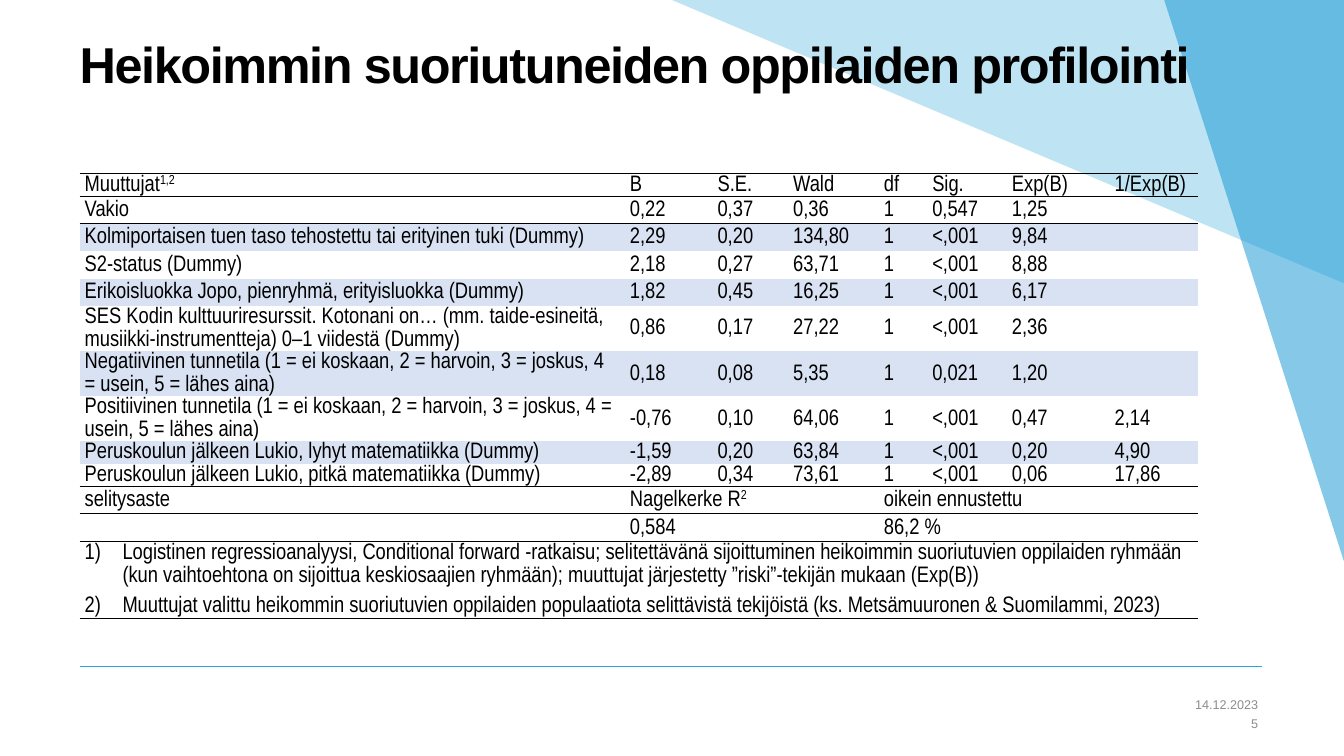
from collections import namedtuple
from dataclasses import dataclass

from lxml.etree import SubElement
from pptx import Presentation
from pptx.dml.color import RGBColor
from pptx.enum.shapes import MSO_CONNECTOR as Connector
from pptx.enum.text import MSO_ANCHOR as Anchor, MSO_AUTO_SIZE as AutoSize, PP_ALIGN as Align
from pptx.oxml.ns import qn
from pptx.util import Pt

Box = namedtuple("Box", "left top width height")


@dataclass(frozen=True)
class Theme:
    ink: str = "000000"
    band: str = "D9E2F3"
    rule: str = "28A7DA"
    ray: str = "0D93D2"
    muted: str = "8C8C8C"
    font: str = "Arial"
    table_font: str = "Arial Narrow"
    title_size: int = 36
    table_size: int = 16
    footer_size: int = 9
    plain_table: str = "{2D5ABB26-0587-4C30-8999-92F81FD0307C}"


THEME = Theme()
SLIDE = Box(0, 0, 960, 540)
TITLE = Box(56.9, 30.2, 844.6, 94.3)
TABLE = Box(56.9, 123.8, 800, 310)
FOOTER = Box(518.4, 496, 380.2, 28)
RULE = Box(56.9, 475.9, 844.6, 0)

COLUMN_WIDTHS = (389.5, 62.6, 54, 64.8, 34.6, 56.9, 73.4, 63.4)
ROW_HEIGHTS = (16.4, *[19.5] * 4, *[32.1] * 3, *[16.2] * 2, *[16] * 2, 55)
RULED_EDGES = {0, 1, 10, 12, 13}
BANDED_ROWS = {2, 4, 6, 8}
MERGES = ((10, 1, 3), (10, 4, 6), (11, 1, 2), (11, 4, 6), (12, 0, 7))

ROWS = (
    ("Muuttujat^1,2", "B", "S.E.", "Wald", "df", "Sig.", "Exp(B)", "1/Exp(B)"),
    ("Vakio", "0,22", "0,37", "0,36", "1", "0,547", "1,25"),
    ("Kolmiportaisen tuen taso tehostettu tai erityinen tuki (Dummy)",
     "2,29", "0,20", "134,80", "1", "<,001", "9,84"),
    ("S2-status (Dummy)", "2,18", "0,27", "63,71", "1", "<,001", "8,88"),
    ("Erikoisluokka Jopo, pienryhmä, erityisluokka (Dummy)",
     "1,82", "0,45", "16,25", "1", "<,001", "6,17"),
    ("SES Kodin kulttuuriresurssit. Kotonani on… (mm. taide-esineitä, "
     "musiikki-instrumentteja) 0–1 viidestä (Dummy)",
     "0,86", "0,17", "27,22", "1", "<,001", "2,36"),
    ("Negatiivinen tunnetila (1 = ei koskaan, 2 = harvoin, 3 = joskus, "
     "4 = usein, 5 = lähes aina)",
     "0,18", "0,08", "5,35", "1", "0,021", "1,20"),
    ("Positiivinen tunnetila (1 = ei koskaan, 2 = harvoin, 3 = joskus, "
     "4 = usein, 5 = lähes aina)",
     "-0,76", "0,10", "64,06", "1", "<,001", "0,47", "2,14"),
    ("Peruskoulun jälkeen Lukio, lyhyt matematiikka (Dummy)",
     "-1,59", "0,20", "63,84", "1", "<,001", "0,20", "4,90"),
    ("Peruskoulun jälkeen Lukio, pitkä matematiikka (Dummy)",
     "-2,89", "0,34", "73,61", "1", "<,001", "0,06", "17,86"),
    ("selitysaste", "Nagelkerke R^2", "", "", "oikein ennustettu"),
    ("", "0,584", "", "", "86,2 %"),
)
NOTES = (
    "Logistinen regressioanalyysi, Conditional forward -ratkaisu; selitettävänä "
    "sijoittuminen heikoimmin suoriutuvien oppilaiden ryhmään (kun vaihtoehtona on "
    "sijoittua keskiosaajien ryhmään); muuttujat järjestetty ”riski”-tekijän mukaan (Exp(B))",
    "Muuttujat valittu heikommin suoriutuvien oppilaiden populaatiota selittävistä "
    "tekijöistä (ks. Metsämuuronen & Suomilammi, 2023)",
)


def color(code):
    return RGBColor.from_string(code)


def add_run(para, text, size, font=THEME.font, ink=THEME.ink):
    run = para.add_run()
    run.text = text
    run.font.size = Pt(size)
    run.font.name = font
    run.font.color.rgb = color(ink)
    return run


def set_margins(target, left, top, right, bottom):
    target.margin_left, target.margin_top = Pt(left), Pt(top)
    target.margin_right, target.margin_bottom = Pt(right), Pt(bottom)


def draw_ray(page, corners, fill, alpha):
    points = [(Pt(x), Pt(y)) for x, y in corners]
    builder = page.shapes.build_freeform(*points[0])
    builder.add_line_segments(points[1:], close=True)
    ray = builder.convert_to_shape()
    ray.shadow.inherit = False
    ray.line.fill.background()
    ray.fill.solid()
    ray.fill.fore_color.rgb = color(fill)
    tint = ray.fill._xPr.find(qn("a:solidFill"))[0]
    SubElement(tint, qn("a:alpha"), val=str(alpha * 1000))


def draw_backdrop(page, box, rule_box):
    right = box.left + box.width
    rule = page.shapes.add_connector(
        Connector.STRAIGHT, Pt(rule_box.left), Pt(rule_box.top),
        Pt(rule_box.left + rule_box.width), Pt(rule_box.top))
    rule.line.color.rgb = color(THEME.rule)
    rule.line.width = Pt(1)
    SubElement(rule._element.spPr, qn("a:effectLst"))
    for start, depth, fill, alpha in ((480, 202.3, THEME.rule, 30), (831.6, 401, THEME.ray, 50)):
        corners = ((box.left + start, box.top), (right, box.top + depth), (right, box.top))
        draw_ray(page, corners, fill, alpha)


def draw_title(page, box, text):
    title = page.shapes.title
    page.shapes._spTree.append(title._element)
    title.left, title.top, title.width, title.height = map(Pt, box)
    frame = title.text_frame
    frame.word_wrap = True
    frame.auto_size = AutoSize.NONE
    frame.vertical_anchor = Anchor.TOP
    set_margins(frame, 0, 0, 0, 0)
    para = frame.paragraphs[0]
    para.alignment = Align.LEFT
    para.line_spacing = 0.85
    run = add_run(para, text, THEME.title_size)
    run.font.bold = True
    run.font._element.set("spc", "-100")


def fill_paragraph(para, text):
    para.line_spacing = 1.07
    para.space_after = Pt(6)
    if not text:
        SubElement(para._p, qn("a:endParaRPr"), sz=str(THEME.table_size * 100))
    for level, part in enumerate(text.split("^") if text else ()):
        run = add_run(para, part, THEME.table_size, THEME.table_font)
        if level:
            run.font._element.set("baseline", "30000")


def draw_cell_rule(cell, side):
    line = SubElement(cell._tc.get_or_add_tcPr(), qn("a:" + side), w=str(Pt(1)))
    SubElement(SubElement(line, qn("a:solidFill")), qn("a:srgbClr"), val=THEME.ink)


def style_cell(cell, row):
    cell.vertical_anchor = Anchor.MIDDLE
    set_margins(cell, 3.6, 0, 3.6, 0)
    for side, edge in (("lnT", row), ("lnB", row + 1)):
        if edge in RULED_EDGES:
            draw_cell_rule(cell, side)
    if row in BANDED_ROWS:
        cell.fill.solid()
        cell.fill.fore_color.rgb = color(THEME.band)
    else:
        cell.fill.background()


def fill_notes(cell):
    frame = cell.text_frame
    for index, note in enumerate(NOTES):
        para = frame.add_paragraph() if index else frame.paragraphs[0]
        fill_paragraph(para, note)
        settings = para._p.get_or_add_pPr()
        settings.set("marL", str(Pt(27)))
        settings.set("indent", str(-Pt(27)))
        SubElement(settings, qn("a:buFont"), typeface=THEME.table_font)
        SubElement(settings, qn("a:buAutoNum"), type="arabicParenR")


def draw_table(page, box):
    table = page.shapes.add_table(len(ROW_HEIGHTS), len(COLUMN_WIDTHS), *map(Pt, box)).table
    table.first_row = table.horz_banding = False
    table._tbl.tblPr.find(qn("a:tableStyleId")).text = THEME.plain_table
    for column, width in zip(table.columns, COLUMN_WIDTHS):
        column.width = Pt(width)
    for row, height in enumerate(ROW_HEIGHTS):
        table.rows[row].height = Pt(height)
        texts = ROWS[row] if row < len(ROWS) else ()
        for column in range(len(COLUMN_WIDTHS)):
            cell = table.cell(row, column)
            style_cell(cell, row)
            if row == len(ROWS) and column == 0:
                fill_notes(cell)
            else:
                text = texts[column] if column < len(texts) else ""
                fill_paragraph(cell.text_frame.paragraphs[0], text)
    for row, first, last in MERGES:
        table.cell(row, first).merge(table.cell(row, last))


def draw_footer(page, box, lines):
    height = box.height / len(lines)
    for index, text in enumerate(lines):
        label = page.shapes.add_textbox(
            Pt(box.left), Pt(box.top + index * height), Pt(box.width), Pt(height))
        frame = label.text_frame
        frame.word_wrap = True
        frame.vertical_anchor = Anchor.MIDDLE
        set_margins(frame, 7.2, 3.6, 0, 3.6)
        para = frame.paragraphs[0]
        para.alignment = Align.RIGHT
        add_run(para, text, THEME.footer_size, ink=THEME.muted)


def main():
    deck = Presentation()
    deck.slide_width, deck.slide_height = Pt(SLIDE.width), Pt(SLIDE.height)
    page = deck.slides.add_slide(deck.slide_layouts[5])
    draw_backdrop(page, SLIDE, RULE)
    draw_title(page, TITLE, "Heikoimmin suoriutuneiden oppilaiden profilointi")
    draw_table(page, TABLE)
    draw_footer(page, FOOTER, ("14.12.2023", "5"))
    deck.save("out.pptx")


if __name__ == "__main__":
    main()
